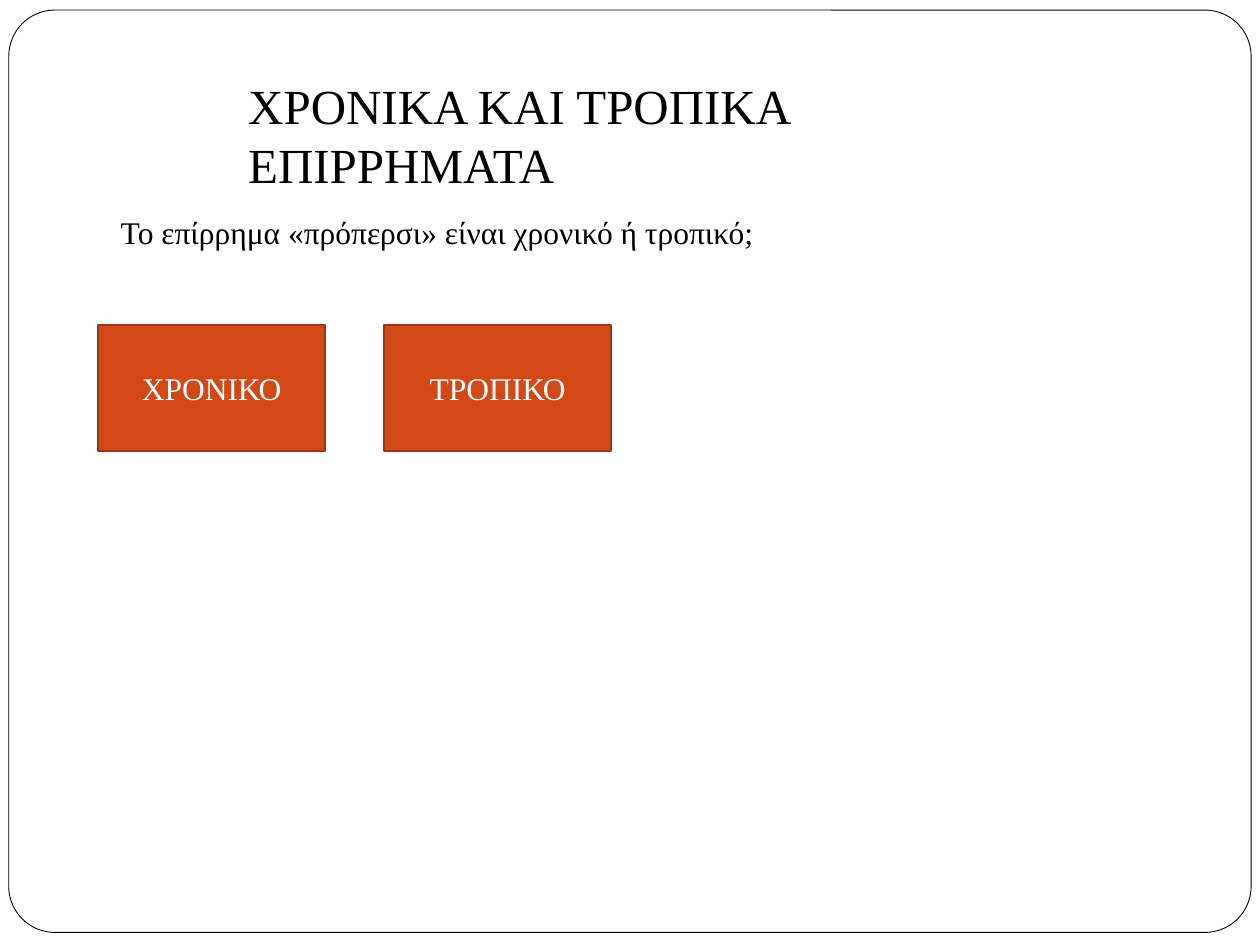
from pptx import Presentation
from pptx.dml.color import RGBColor
from pptx.enum.shapes import MSO_SHAPE
from pptx.enum.text import MSO_ANCHOR, MSO_AUTO_SIZE, PP_ALIGN
from pptx.util import Inches, Pt

FONT = "Times New Roman"
BLACK, WHITE = "000000", "FFFFFF"
ORANGE, RUST = "D34817", "9C3511"


def color(hex_value):
    return RGBColor.from_string(hex_value)


def write(text_frame, text, size, hex_value, align, anchor):
    text_frame.word_wrap = True
    text_frame.vertical_anchor = anchor
    paragraph = text_frame.paragraphs[0]
    paragraph.alignment = align
    run = paragraph.add_run()
    run.text = text
    run.font.name = FONT
    run.font.size = Pt(size)
    run.font.color.rgb = color(hex_value)


def add_panel(slide, preset, box, fill, line, line_width):
    panel = slide.shapes.add_shape(preset, *map(Inches, box))
    panel.shadow.inherit = False
    panel.fill.solid()
    panel.fill.fore_color.rgb = color(fill)
    panel.line.color.rgb = color(line)
    panel.line.width = Pt(line_width)
    return panel


def add_frame(slide, box):
    frame = add_panel(slide, MSO_SHAPE.ROUNDED_RECTANGLE, box, WHITE, BLACK, 0.5)
    frame.adjustments[0] = 0.05
    # The frame lies behind the title
    slide.shapes.title.element.addprevious(frame.element)


def place_title(slide, box, text):
    title = slide.shapes.title
    title.left, title.top, title.width, title.height = map(Inches, box)
    write(title.text_frame, text, 28, BLACK, PP_ALIGN.LEFT, MSO_ANCHOR.TOP)
    title.text_frame.auto_size = MSO_AUTO_SIZE.SHAPE_TO_FIT_TEXT


def add_question(slide, box, text):
    question = slide.shapes.add_textbox(*map(Inches, box))
    write(question.text_frame, text, 18, BLACK, PP_ALIGN.LEFT, MSO_ANCHOR.TOP)
    question.text_frame.auto_size = MSO_AUTO_SIZE.SHAPE_TO_FIT_TEXT


def add_answers(slide, box, answers, gap):
    left, top, width, height = box
    answer_width = (width - gap * (len(answers) - 1)) / len(answers)
    for index, text in enumerate(answers):
        answer_box = (left + index * (answer_width + gap), top, answer_width, height)
        answer = add_panel(slide, MSO_SHAPE.RECTANGLE, answer_box, ORANGE, RUST, 1)
        write(answer.text_frame, text, 18, WHITE, PP_ALIGN.CENTER, MSO_ANCHOR.MIDDLE)


def main():
    presentation = Presentation()
    presentation.slide_width, presentation.slide_height = Inches(10), Inches(7.5)
    slide = presentation.slides.add_slide(presentation.slide_layouts[5])

    # Page border and heading
    add_frame(slide, (0.07, 0.08, 9.86, 7.32))
    place_title(slide, (1.87, 0.55, 6.72, 0.57), "ΧΡΟΝΙΚΑ ΚΑΙ ΤΡΟΠΙΚΑ ΕΠΙΡΡΗΜΑΤΑ")

    # Quiz question and its possible answers
    add_question(slide, (0.86, 1.64, 6.48, 0.4),
                 "Το επίρρημα «πρόπερσι» είναι χρονικό ή τροπικό;")
    add_answers(slide, (0.78, 2.58, 4.07, 1), ("ΧΡΟΝΙΚΟ", "ΤΡΟΠΙΚΟ"), gap=0.47)

    presentation.save("out.pptx")


if __name__ == "__main__":
    main()
